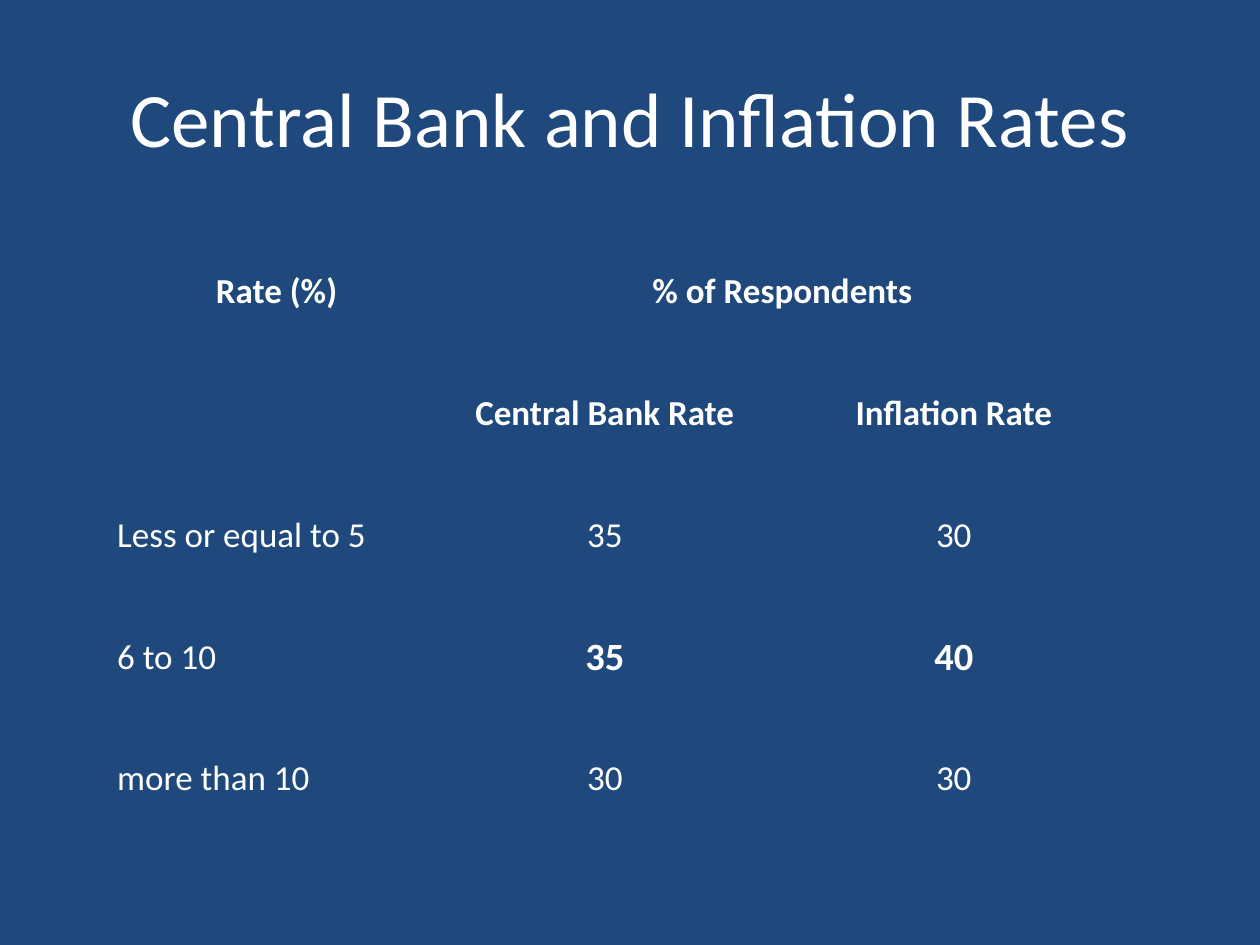
from pptx import Presentation
from pptx.dml.color import RGBColor
from pptx.enum.text import MSO_ANCHOR, PP_ALIGN
from pptx.oxml.ns import qn
from pptx.util import Inches, Pt

COLORS = {"background": "1F497D", "text": "FFFFFF"}
FONT = "Calibri"
NO_GRID_STYLE = "{2D5ABB26-0587-4C30-8999-92F81FD0307C}"


def format_text(tf, size, bold=False, align=PP_ALIGN.CENTER):
    for p in tf.paragraphs:
        p.alignment = align
        for r in p.runs:
            r.font.name = FONT
            r.font.size = Pt(size)
            r.font.bold = bold
            r.font.color.rgb = RGBColor.from_string(COLORS["text"])


prs = Presentation()
prs.slide_width, prs.slide_height = Inches(10), Inches(7.5)
s = prs.slides.add_slide(prs.slide_layouts[5])
s.background.fill.solid()
s.background.fill.fore_color.rgb = RGBColor.from_string(COLORS["background"])

# Title
title = s.shapes.title
title.left, title.top = Inches(0.5), Inches(0.3)
title.width, title.height = Inches(9), Inches(1.25)
title.text_frame.text = "Central Bank and Inflation Rates"
title.text_frame.vertical_anchor = MSO_ANCHOR.MIDDLE
format_text(title.text_frame, 44)

# Table of rates
rows = [
    ["Rate (%)", "% of Respondents ", ""],
    ["", "Central Bank Rate", "Inflation Rate"],
    ["Less or equal to 5", "35", "30"],
    ["6 to 10", "35", "40"],
    ["more than 10", "30", "30"],
]
col_widths = [2.55, 2.66, 2.88]
header_rows = 2
highlight_row = 3

frame = s.shapes.add_table(len(rows), len(col_widths), Inches(0.92), Inches(1.83),
                           Inches(sum(col_widths)), Inches(4.83))
table = frame.table
table.first_row = table.horz_banding = False
for style in frame.element.iter(qn("a:tableStyleId")):
    style.text = NO_GRID_STYLE
for column, width in zip(table.columns, col_widths):
    column.width = Inches(width)
table.cell(0, 1).merge(table.cell(0, 2))

for i, row in enumerate(rows):
    for j, text in enumerate(row):
        cell = table.cell(i, j)
        cell.fill.background()
        cell.vertical_anchor = MSO_ANCHOR.MIDDLE
        cell.margin_left = cell.margin_right = cell.margin_top = Inches(0.01)
        cell.margin_bottom = 0
        if not text:
            continue
        header = i < header_rows
        highlight = i == highlight_row and j > 0
        cell.text_frame.text = text
        format_text(cell.text_frame, 22 if highlight else 20, header or highlight,
                    PP_ALIGN.CENTER if header or j > 0 else PP_ALIGN.LEFT)

prs.save("out.pptx")
